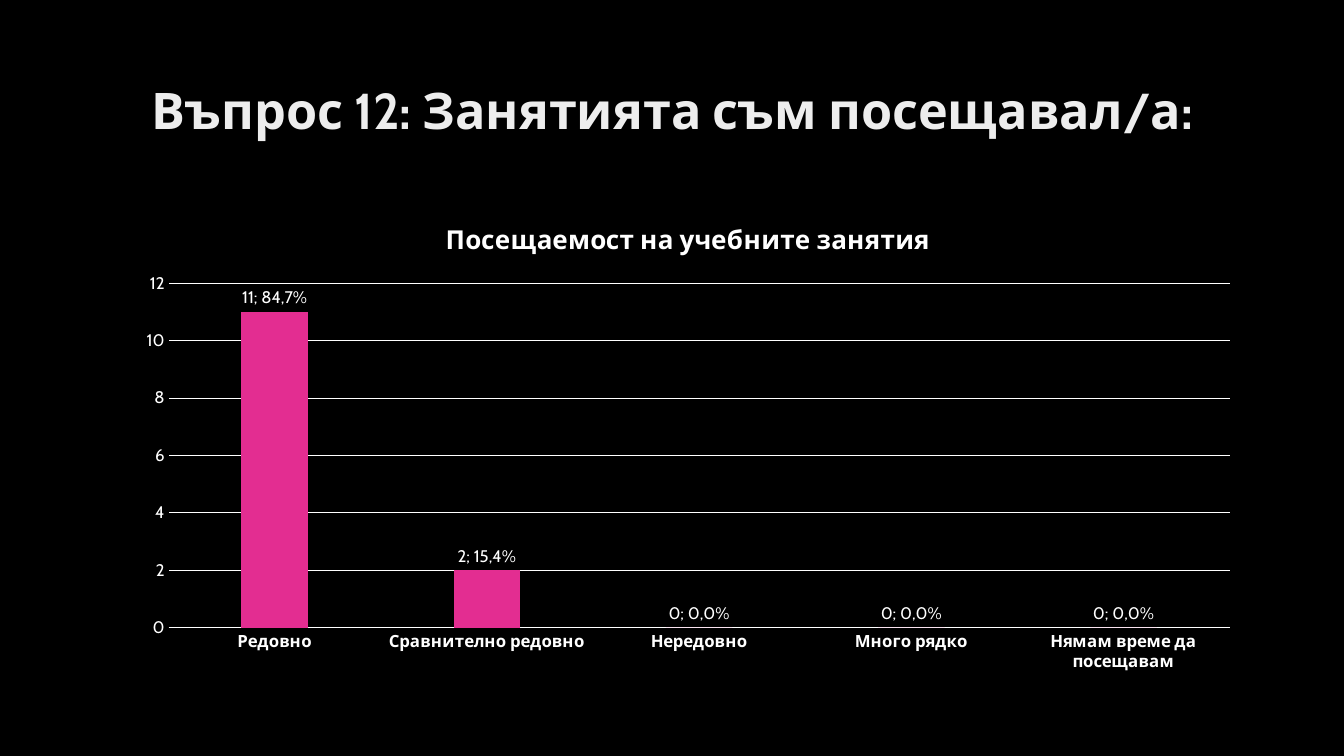
from dataclasses import dataclass

import pptx
import pptx.chart.data
import pptx.dml.color
import pptx.enum.chart
import pptx.enum.text
import pptx.util

Inches = pptx.util.Inches
Pt = pptx.util.Pt
RGBColor = pptx.dml.color.RGBColor

BLACK = RGBColor(0x00, 0x00, 0x00)
WHITE = RGBColor(0xFF, 0xFF, 0xFF)
PALE = RGBColor(0xED, 0xED, 0xED)
PINK = RGBColor(0xE3, 0x2D, 0x91)
TYPEFACE = "Cabin"
QUESTION = "Въпрос 12: Занятията съм посещавал/а:"
ATTENDANCE = "Посещаемост на учебните занятия"


@dataclass(frozen=True)
class Answer:
    wording: str
    votes: int
    share: str

    @property
    def label(self) -> str:
        return f"{self.votes}; {self.share}"


ANSWERS = [
    Answer("Редовно", 11, "84,7%"),
    Answer("Сравнително редовно", 2, "15,4%"),
    Answer("Нередовно", 0, "0,0%"),
    Answer("Много рядко", 0, "0,0%"),
    Answer("Нямам време да посещавам", 0, "0,0%"),
]


def style_font(font, size: float, bold: bool = False, color: RGBColor = WHITE) -> None:
    font.name = TYPEFACE
    font.size = Pt(size)
    font.bold = bold
    font.color.rgb = color


def style_line(line) -> None:
    line.color.rgb = WHITE
    line.width = Pt(0.75)


def add_question(slide) -> None:
    question = slide.shapes.title
    question.left, question.top = Inches(0.92), Inches(0.4)
    question.width, question.height = Inches(11.5), Inches(1.45)
    frame = question.text_frame
    frame.text = QUESTION
    frame.word_wrap = True
    frame.vertical_anchor = pptx.enum.text.MSO_ANCHOR.MIDDLE
    wording = frame.paragraphs[0]
    wording.alignment = pptx.enum.text.PP_ALIGN.CENTER
    wording.line_spacing = 0.9
    style_font(wording.font, 36, bold=True, color=PALE)


def style_axes(chart) -> None:
    answers_axis, votes_axis = chart.category_axis, chart.value_axis
    for axis in (answers_axis, votes_axis):
        axis.major_tick_mark = pptx.enum.chart.XL_TICK_MARK.NONE
        axis.minor_tick_mark = pptx.enum.chart.XL_TICK_MARK.NONE
        style_font(axis.tick_labels.font, 12, bold=axis is answers_axis)
    style_line(answers_axis.format.line)
    votes_axis.format.line.fill.background()
    votes_axis.minimum_scale = 0
    votes_axis.maximum_scale = 12
    votes_axis.major_unit = 2
    votes_axis.has_major_gridlines = True
    style_line(votes_axis.major_gridlines.format.line)


def style_columns(chart) -> None:
    plot = chart.plots[0]
    plot.gap_width = 219
    plot.overlap = -27
    plot.vary_by_categories = False
    votes = plot.series[0]
    votes.format.fill.solid()
    votes.format.fill.fore_color.rgb = PINK
    outside = pptx.enum.chart.XL_LABEL_POSITION.OUTSIDE_END
    votes.data_labels.show_value = True
    votes.data_labels.position = outside
    style_font(votes.data_labels.font, 12)
    for index, answer in enumerate(ANSWERS):
        label = votes.points[index].data_label
        label.text_frame.text = answer.label
        style_font(label.text_frame.paragraphs[0].font, 12)
        label.position = outside


def add_attendance_chart(slide) -> None:
    attendance = pptx.chart.data.CategoryChartData(number_format="General")
    attendance.categories = [answer.wording for answer in ANSWERS]
    attendance.add_series(ATTENDANCE, [answer.votes for answer in ANSWERS])
    chart = slide.shapes.add_chart(
        pptx.enum.chart.XL_CHART_TYPE.COLUMN_CLUSTERED,
        Inches(1.23), Inches(2), Inches(11.19), Inches(4.76), attendance,
    ).chart
    style_font(chart.font, 10)
    chart.has_legend = False
    chart.has_title = True
    chart.chart_title.include_in_layout = False
    heading = chart.chart_title.text_frame
    heading.text = ATTENDANCE
    style_font(heading.paragraphs[0].font, 18.6, bold=True)
    style_axes(chart)
    style_columns(chart)


def main() -> None:
    deck = pptx.Presentation()
    deck.slide_width, deck.slide_height = Inches(13.33), Inches(7.5)
    slide = deck.slides.add_slide(deck.slide_layouts.get_by_name("Title Only"))
    slide.background.fill.solid()
    slide.background.fill.fore_color.rgb = BLACK
    add_question(slide)
    add_attendance_chart(slide)
    deck.save("out.pptx")


if __name__ == "__main__":
    main()
